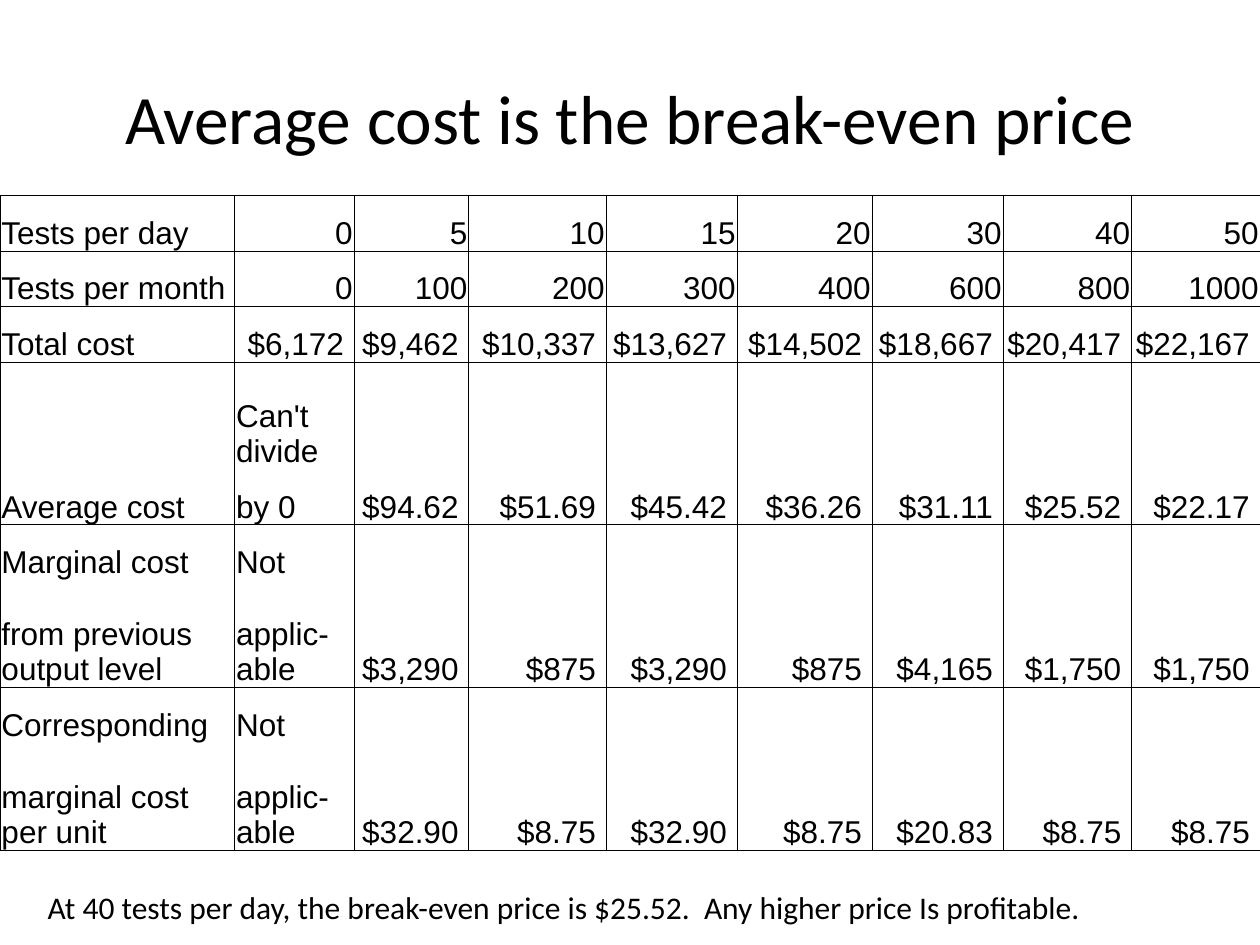
from lxml import etree
from pptx import Presentation
from pptx.dml.color import RGBColor
from pptx.enum.text import MSO_ANCHOR, PP_ALIGN
from pptx.oxml.ns import qn
from pptx.util import Cm, Pt

LEFT, CENTER, RIGHT = PP_ALIGN.LEFT, PP_ALIGN.CENTER, PP_ALIGN.RIGHT
MIDDLE, BOTTOM = MSO_ANCHOR.MIDDLE, MSO_ANCHOR.BOTTOM
BLACK = RGBColor(0x00, 0x00, 0x00)
TITLE_ONLY = 5

COLUMN_WIDTHS = [4.73, 2.41, 2.31, 2.77, 2.64, 2.72, 2.64, 2.59, 2.59]
SINGLE, DOUBLE = 1.12, 2.16
ROW_HEIGHTS = [SINGLE, SINGLE, SINGLE, DOUBLE, SINGLE,
               SINGLE, DOUBLE, SINGLE, DOUBLE]

# Each record: labels, optional second-line labels, and the values.
# A second-line label of None merges the cell with the one above it.
RECORDS = [
    (["Tests per day"], None, ["0", "5", "10", "15", "20", "30", "40", "50"]),
    (["Tests per month"], None,
     ["0", "100", "200", "300", "400", "600", "800", "1000"]),
    (["Total cost"], None,
     ["$6,172 ", "$9,462 ", "$10,337 ", "$13,627 ", "$14,502 ", "$18,667 ",
      "$20,417 ", "$22,167 "]),
    (["Average cost", "Can't divide"], [None, "by 0"],
     ["$94.62 ", "$51.69 ", "$45.42 ", "$36.26 ", "$31.11 ", "$25.52 ",
      "$22.17 "]),
    (["Marginal cost", "Not"], ["from previous output level", "applic-able"],
     ["$3,290 ", "$875 ", "$3,290 ", "$875 ", "$4,165 ", "$1,750 ",
      "$1,750 "]),
    (["Corresponding", "Not"], ["marginal cost per unit", "applic-able"],
     ["$32.90 ", "$8.75 ", "$32.90 ", "$8.75 ", "$20.83 ", "$8.75 ",
      "$8.75 "]),
]


class SlideBuilder:
    """Holds the slide and its style, and adds each kind of element."""

    title_font = "Calibri"
    table_font = "Arial"
    text_size = 18
    border_width = 0.5

    def __init__(self, slide):
        self.slide = slide

    def format_paragraph(self, paragraph, font_name, size, alignment):
        paragraph.alignment = alignment
        paragraph.font.name = font_name
        paragraph.font.size = Pt(size)
        paragraph.font.color.rgb = BLACK

    def add_title(self, text, left, top, width, height):
        title = self.slide.shapes.title
        title.left, title.top = Cm(left), Cm(top)
        title.width, title.height = Cm(width), Cm(height)
        title.text_frame.text = text
        title.text_frame.vertical_anchor = MIDDLE
        self.format_paragraph(title.text_frame.paragraphs[0],
                              self.title_font, 39.6, CENTER)

    def add_caption(self, text, left, top, width, height):
        box = self.slide.shapes.add_textbox(Cm(left), Cm(top), Cm(width), Cm(height))
        box.text_frame.word_wrap = True
        box.text_frame.text = text
        self.format_paragraph(box.text_frame.paragraphs[0],
                              self.title_font, self.text_size, LEFT)

    def add_table(self, left, top):
        frame = self.slide.shapes.add_table(
            len(ROW_HEIGHTS), len(COLUMN_WIDTHS), Cm(left), Cm(top),
            Cm(sum(COLUMN_WIDTHS)), Cm(sum(ROW_HEIGHTS)))
        table = frame.table
        table.first_row = table.horz_banding = False
        for column, width in zip(table.columns, COLUMN_WIDTHS):
            column.width = Cm(width)
        for row, height in zip(table.rows, ROW_HEIGHTS):
            row.height = Cm(height)
        return table

    def fill_cell(self, cell, text, alignment, sides):
        cell.margin_left = cell.margin_right = cell.margin_top = Cm(0.03)
        cell.margin_bottom = 0
        cell.vertical_anchor = BOTTOM
        cell.fill.background()
        cell.text = text
        self.format_paragraph(cell.text_frame.paragraphs[0],
                              self.table_font, self.text_size, alignment)
        self.set_borders(cell, sides)

    def set_borders(self, cell, sides):
        properties = cell._tc.get_or_add_tcPr()
        for index, side in enumerate("LRTB"):
            line = etree.Element(qn(f"a:ln{side}"), w=str(Pt(self.border_width)))
            if side in sides:
                fill = etree.SubElement(line, qn("a:solidFill"))
                etree.SubElement(fill, qn("a:srgbClr"), val=str(BLACK))
            else:
                etree.SubElement(line, qn("a:noFill"))
            properties.insert(index, line)

    def add_record(self, table, row, labels, second_labels, values):
        """Fill one record and return the number of rows it takes."""
        rows_taken = 2 if second_labels else 1
        lower_texts = (second_labels or []) + [None] * len(values)
        for column, text in enumerate(labels + values):
            cell = table.cell(row, column)
            lower_text = lower_texts[column] if second_labels else None
            alignment = LEFT if column < len(labels) else RIGHT
            self.fill_cell(cell, text, alignment, "LRT" if lower_text else "LRTB")
            if second_labels:
                lower_cell = table.cell(row + 1, column)
                self.fill_cell(lower_cell, lower_text or "", alignment, "LRB")
                if lower_text is None:
                    cell.merge(lower_cell)
        return rows_taken


def main():
    presentation = Presentation()
    presentation.slide_width, presentation.slide_height = Cm(25.4), Cm(19.05)
    slide = presentation.slides.add_slide(presentation.slide_layouts[TITLE_ONLY])
    builder = SlideBuilder(slide)

    # Title
    builder.add_title("Average cost is the break-even price", 1.27, 0.76, 22.86, 3.18)

    # Cost table
    table = builder.add_table(0, 3.94)
    row = 0
    for labels, second_labels, values in RECORDS:
        row += builder.add_record(table, row, labels, second_labels, values)

    # Conclusion
    builder.add_caption(
        "At 40 tests per day, the break-even price is $25.52.  "
        "Any higher price Is profitable.", 0.71, 17.78, 23.42, 1.02)

    presentation.save("out.pptx")


if __name__ == "__main__":
    main()
